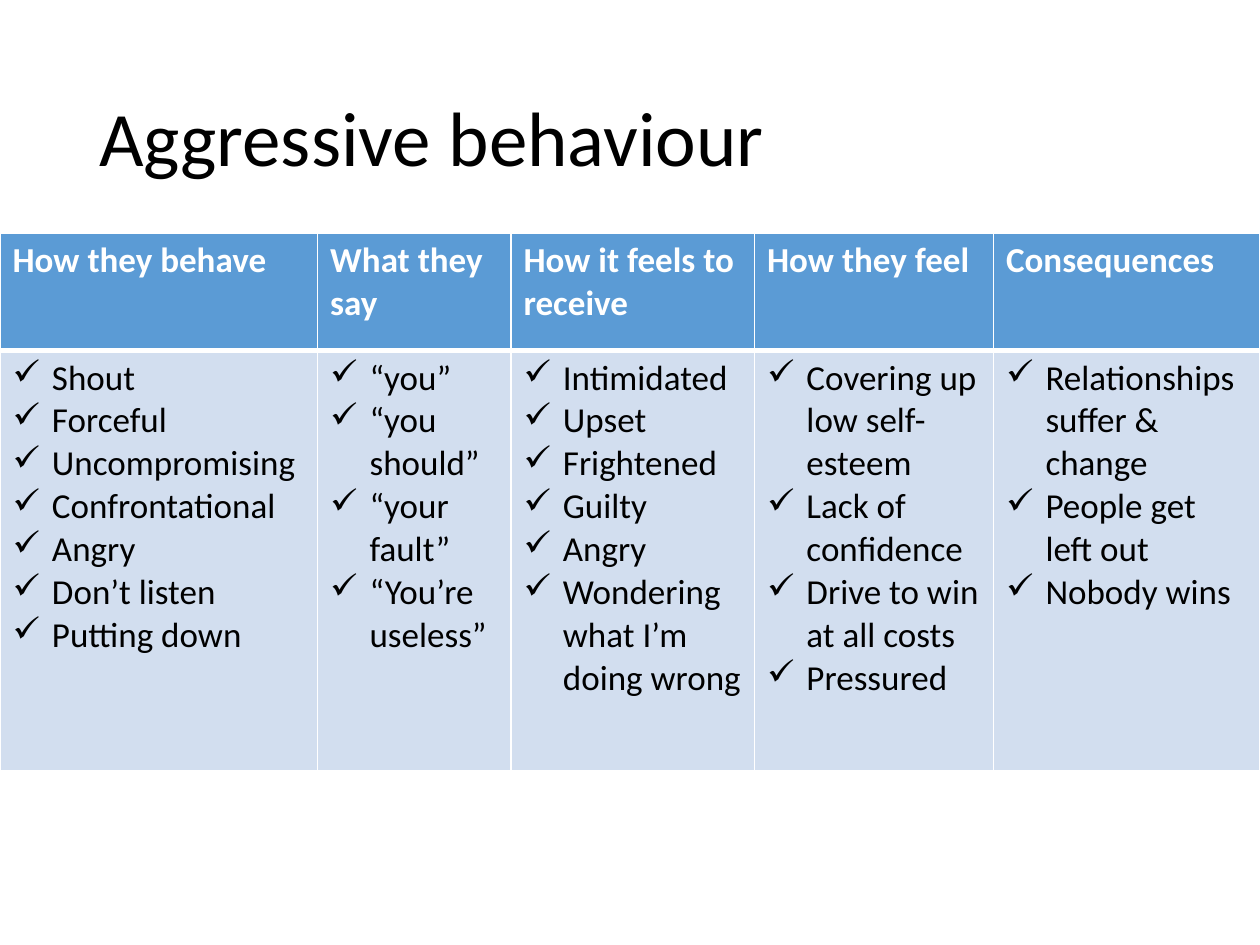
from dataclasses import dataclass

from lxml import etree
from pptx import Presentation
from pptx.dml.color import RGBColor
from pptx.enum import text
from pptx.oxml import ns
from pptx.util import Pt


@dataclass(frozen=True)
class Theme:
    font: str = "Calibri"
    title: float = 44
    body: float = 20
    ink: str = "000000"
    white: str = "FFFFFF"
    head: str = "5B9BD5"
    pale: str = "D2DEEF"
    thin: float = 1
    thick: float = 3
    indent: float = 22.5


@dataclass(frozen=True)
class Column:
    head: str
    width: float
    items: tuple[str, ...]


THEME = Theme()
TOP = 133.2
ROWS = (67, 240)
COLUMNS = (
    Column("How they behave", 181.5,
           ("Shout", "Forceful", "Uncompromising", "Confrontational",
            "Angry", "Don’t listen", "Putting down")),
    Column("What they say", 110.5,
           ("“you”", "“you should”", "“your fault”", "“You’re useless”")),
    Column("How it feels to receive", 139.2,
           ("Intimidated", "Upset", "Frightened", "Guilty", "Angry",
            "Wondering what I’m doing wrong")),
    Column("How they feel", 136.6,
           ("Covering up low self-esteem", "Lack of confidence",
            "Drive to win at all costs", "Pressured")),
    Column("Consequences", 152.2,
           ("Relationships suffer & change", "People get left out",
            "Nobody wins")),
)


def style(frame, size: float, color: str, bold: bool = False) -> None:
    for para in frame.paragraphs:
        for run in para.runs:
            run.font.name = THEME.font
            run.font.size = Pt(size)
            run.font.bold = bold
            run.font.color.rgb = RGBColor.from_string(color)


def add_ticks(frame) -> None:
    """Give every paragraph a hanging tick bullet."""
    for para in frame.paragraphs:
        props = para._p.get_or_add_pPr()
        props.set("marL", str(Pt(THEME.indent)))
        props.set("indent", str(-Pt(THEME.indent)))
        etree.SubElement(props, ns.qn("a:buChar")).set("char", "✓")


def set_edges(cell, top: float, bottom: float) -> None:
    """Draw the white cell borders, which come before the fill."""
    props = cell._tc.get_or_add_tcPr()
    edges = {"L": THEME.thin, "R": THEME.thin, "T": top, "B": bottom}
    for spot, (side, width) in enumerate(edges.items()):
        line = etree.Element(ns.qn(f"a:ln{side}"), w=str(Pt(width)))
        fill = etree.SubElement(line, ns.qn("a:solidFill"))
        etree.SubElement(fill, ns.qn("a:srgbClr")).set("val", THEME.white)
        props.insert(spot, line)


def fill_cell(cell, words: str, back: str, color: str, bold: bool) -> None:
    cell.text_frame.text = words
    style(cell.text_frame, THEME.body, color, bold)
    cell.fill.solid()
    cell.fill.fore_color.rgb = RGBColor.from_string(back)


def add_title(slide, words: str) -> None:
    title = slide.shapes.title
    title.left, title.top = Pt(49.5), Pt(28.8)
    title.width, title.height = Pt(621), Pt(104.4)
    frame = title.text_frame
    frame.text = words
    frame.word_wrap = True
    frame.vertical_anchor = text.MSO_ANCHOR.MIDDLE
    para = frame.paragraphs[0]
    para.alignment = text.PP_ALIGN.LEFT
    para.line_spacing = 0.9
    style(frame, THEME.title, THEME.ink)


def add_grid(slide, columns: tuple[Column, ...]) -> None:
    width = sum(col.width for col in columns)
    grid = slide.shapes.add_table(
        len(ROWS), len(columns), Pt(0), Pt(TOP), Pt(width), Pt(sum(ROWS))
    ).table
    for row, height in zip(grid.rows, ROWS):
        row.height = Pt(height)
    for spot, col in enumerate(columns):
        grid.columns[spot].width = Pt(col.width)
        head, body = grid.cell(0, spot), grid.cell(1, spot)
        fill_cell(head, col.head, THEME.head, THEME.white, True)
        set_edges(head, THEME.thin, THEME.thick)
        fill_cell(body, "\n".join(col.items), THEME.pale, THEME.ink, False)
        add_ticks(body.text_frame)
        set_edges(body, THEME.thick, THEME.thin)


def main() -> None:
    deck = Presentation()
    deck.slide_width, deck.slide_height = Pt(720), Pt(540)
    # Title-only layout
    slide = deck.slides.add_slide(deck.slide_layouts[5])
    add_title(slide, "Aggressive behaviour")
    add_grid(slide, COLUMNS)
    deck.save("out.pptx")


if __name__ == "__main__":
    main()
